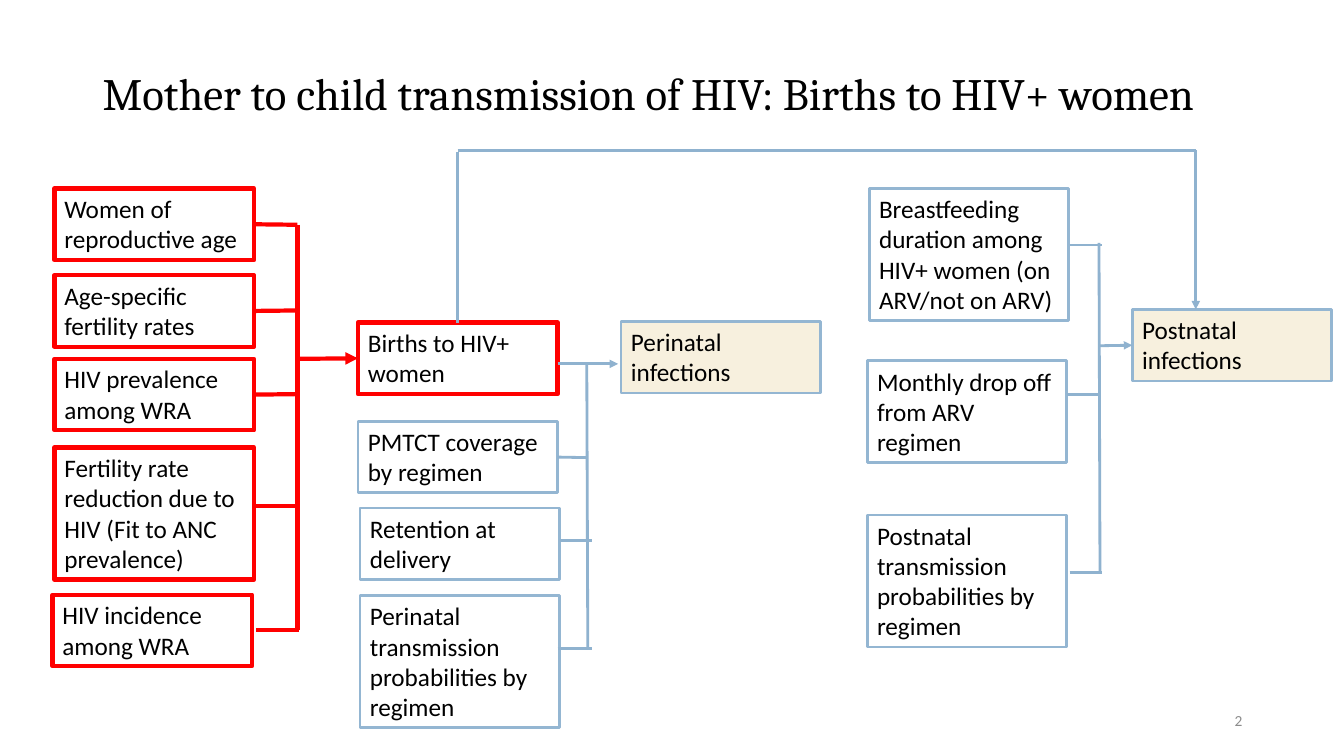
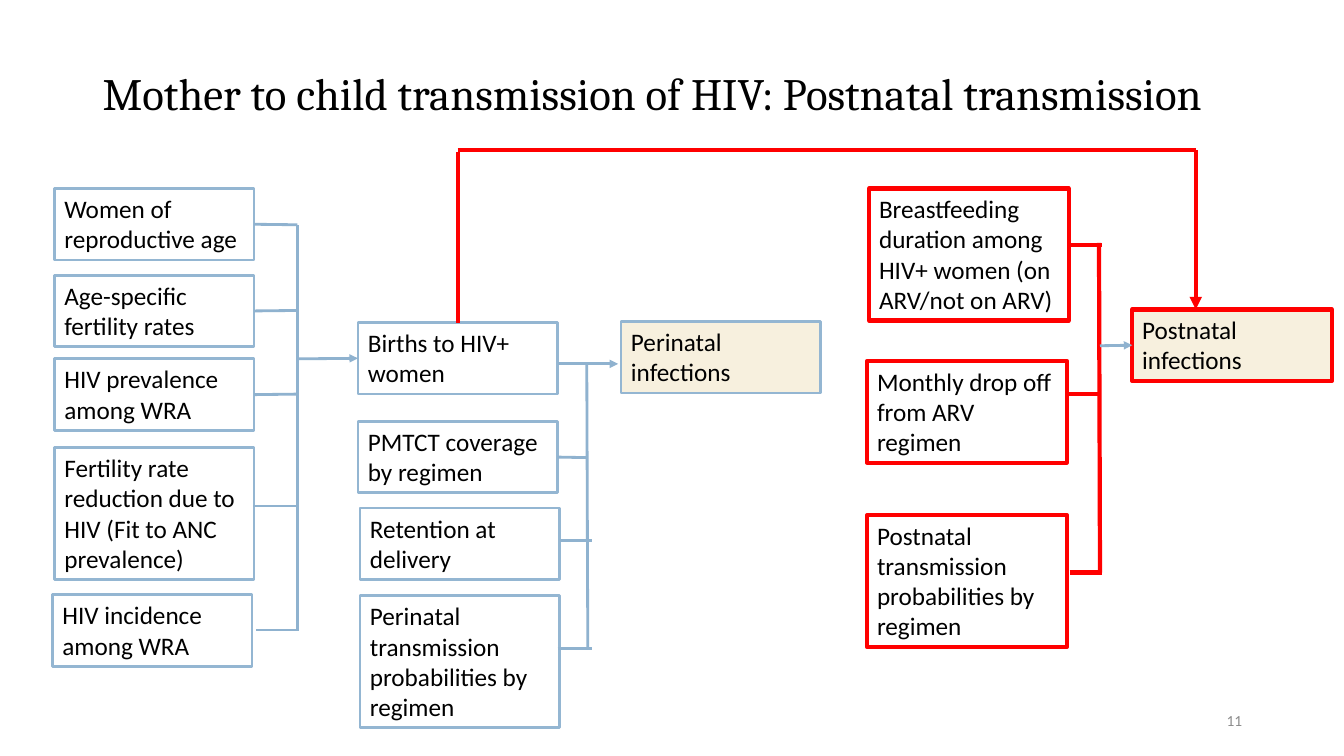
from lxml.etree import SubElement
from pptx import Presentation
from pptx.dml.color import RGBColor
from pptx.enum.shapes import MSO_CONNECTOR, MSO_SHAPE
from pptx.enum.text import MSO_ANCHOR, MSO_AUTO_SIZE, PP_ALIGN
from pptx.oxml.ns import qn
from pptx.util import Pt

PX = 9144  # EMU per px, 100 px to the inch
COLORS = {
    "text": "000000", "number": "8C8C8C", "highlight": "FF0000",
    "box": "94B6D2", "line": "8FB2CF", "result": "F7F0DE",
}
TITLE = "Mother to child transmission of HIV: "
BOX_W = 198
HEIGHTS = {2: 71, 3: 101, 4: 131}  # box height by number of text lines
SNAP = 3  # a line end this near to a side's middle is joined to it

# Title ending, page number, highlighted groups
SLIDES = [
    ("Births to HIV+ women", "2", {"births"}),
    ("Postnatal transmission", "11", {"postnatal", "loop"}),
]

# Group, left, top, text lines, text
BOXES = [
    ("births", 54, 187, 2, "Women of reproductive age"),
    ("births", 54, 273, 2, "Age-specific fertility rates"),
    ("births", 54, 356, 2, "HIV prevalence among WRA"),
    ("births", 54, 444, 4, "Fertility rate reduction due to HIV (Fit to ANC prevalence)"),
    ("births", 52, 590, 2, "HIV incidence among WRA"),
    ("births", 355, 320, 2, "Births to HIV+ women"),
    ("perinatal", 355, 418, 2, "PMTCT coverage by regimen"),
    ("perinatal", 357, 504, 2, "Retention at delivery"),
    ("perinatal", 357, 591, 4, "Perinatal transmission probabilities by regimen"),
    ("perinatal", 616, 319, 2, "Perinatal infections"),
    ("postnatal", 862, 187, 4, "Breastfeeding duration among HIV+ women (on ARV/not on ARV)"),
    ("postnatal", 860, 358, 3, "Monthly drop off from ARV regimen"),
    ("postnatal", 860, 511, 4, "Postnatal transmission probabilities by regimen"),
    ("postnatal", 1123, 307, 2, "Postnatal infections"),
]
RESULTS = {"Perinatal infections", "Postnatal infections"}

# Group, trunk (x1, y1, x2, y2), stubs (x1, x2, y)
BRACKETS = [
    ("births", (295, 223, 295, 625),
     [(252, 295, 223), (252, 295, 308), (252, 295, 391), (251, 294, 502), (254, 297, 625)]),
    ("perinatal", (582, 361, 583, 643),
     [(550, 582, 454), (555, 587, 536), (553, 587, 643)]),
    ("postnatal", (1090, 241, 1091, 568),
     [(1061, 1093, 243), (1058, 1090, 391), (1061, 1093, 568)]),
]

# Group, x1, y1, x2, y2, arrowhead
LINES = [
    ("births", 295, 356, 355, 356, True),
    ("perinatal", 553, 361, 613, 361, True),
    ("outcome", 1091, 343, 1123, 342, True),
    ("loop", 454, 151, 454, 320, False),
    ("loop", 454, 149, 1186, 149, False),
    ("loop", 1186, 149, 1186, 307, True),
]


def rgb(name):
    return RGBColor.from_string(COLORS[name])


def add_text(tf, text, size, font="Calibri", color="text", align=PP_ALIGN.LEFT):
    tf.word_wrap = True
    p = tf.paragraphs[0]
    p.alignment = align
    r = p.add_run()
    r.text = text
    r.font.size, r.font.name = Pt(size), font
    r.font.color.rgb = rgb(color)
    return p


def add_label(s, left, top, width, height, *args, **kwargs):
    tf = s.shapes.add_textbox(left * PX, top * PX, width * PX, height * PX).text_frame
    tf.vertical_anchor = MSO_ANCHOR.MIDDLE
    return add_text(tf, *args, **kwargs)


def set_stroke(line, plain, highlighted):
    line.color.rgb = rgb("highlight" if highlighted else plain)
    line.width = Pt(3 if highlighted else 2)


def add_box(s, left, top, rows, text, highlighted):
    sp = s.shapes.add_shape(MSO_SHAPE.RECTANGLE, left * PX, top * PX,
                            BOX_W * PX, HEIGHTS[rows] * PX)
    sp.shadow.inherit = False
    if text in RESULTS:
        sp.fill.solid()
        sp.fill.fore_color.rgb = rgb("result")
    else:
        sp.fill.background()
    set_stroke(sp.line, "box", highlighted)
    tf = sp.text_frame
    tf.vertical_anchor = MSO_ANCHOR.TOP
    tf.auto_size = MSO_AUTO_SIZE.SHAPE_TO_FIT_TEXT
    add_text(tf, text, 18)
    return sp


def find_site(boxes, x, y):
    """Return the box and side whose middle lies at the point, if any."""
    for sp in boxes:
        mid_x, mid_y = sp.left + sp.width / 2, sp.top + sp.height / 2
        sites = [(mid_x, sp.top), (sp.left, mid_y),
                 (mid_x, sp.top + sp.height), (sp.left + sp.width, mid_y)]
        for side, (sx, sy) in enumerate(sites):
            if max(abs(sx - x * PX), abs(sy - y * PX)) <= SNAP * PX:
                return sp, side
    return None


def add_line(s, boxes, x1, y1, x2, y2, highlighted, arrow=False):
    cx = s.shapes.add_connector(MSO_CONNECTOR.STRAIGHT, x1 * PX, y1 * PX, x2 * PX, y2 * PX)
    set_stroke(cx.line, "line", highlighted)
    if arrow:
        SubElement(cx.line._get_or_add_ln(), qn("a:tailEnd"), type="triangle")
    SubElement(cx._element.spPr, qn("a:effectLst"))
    for site, connect in ((find_site(boxes, x1, y1), cx.begin_connect),
                          (find_site(boxes, x2, y2), cx.end_connect)):
        if site:
            connect(*site)


def build_slide(prs, ending, number, highlights):
    s = prs.slides.add_slide(prs.slide_layouts[6])
    # Page number and title
    add_label(s, 942, 695, 300, 40, number, 11, color="number", align=PP_ALIGN.RIGHT)
    add_label(s, 92, 40, 1150, 111, TITLE + ending, 32, font="Cambria").line_spacing = 0.9
    # Boxes
    boxes = [add_box(s, *box, group in highlights) for group, *box in BOXES]
    # Brackets that gather the inputs
    for group, trunk, stubs in BRACKETS:
        for ends in [trunk] + [(x1, y, x2, y) for x1, x2, y in stubs]:
            add_line(s, boxes, *ends, group in highlights)
    # Arrows to the results
    for group, *ends, arrow in LINES:
        add_line(s, boxes, *ends, group in highlights, arrow)


def main():
    prs = Presentation()
    prs.slide_width, prs.slide_height = 1333 * PX, 750 * PX
    for slide in SLIDES:
        build_slide(prs, *slide)
    prs.save("out.pptx")


if __name__ == "__main__":
    main()
